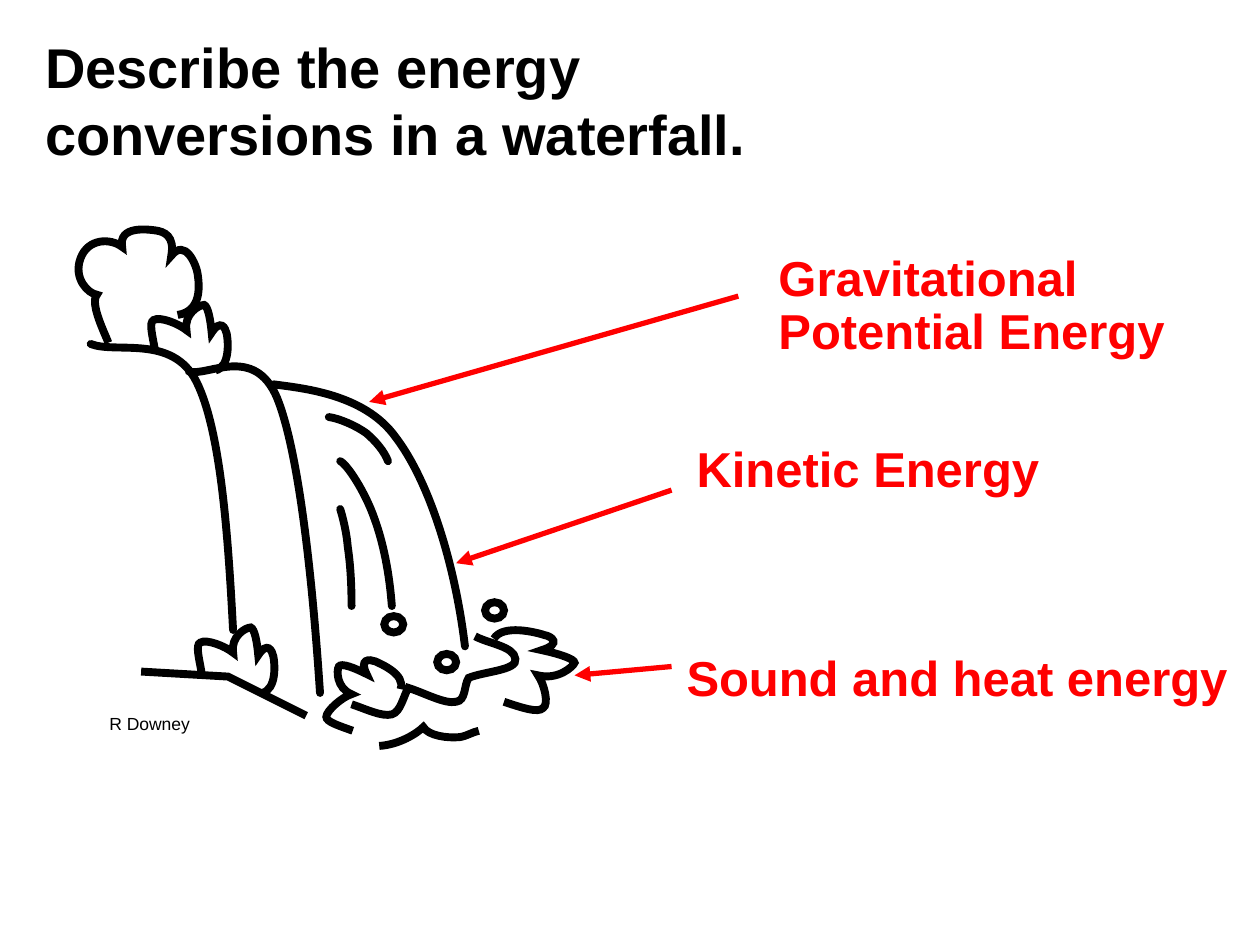
from pptx import Presentation
from pptx.dml.color import RGBColor
from pptx.enum.shapes import MSO_CONNECTOR as CONNECTOR, MSO_SHAPE as SHAPE
from pptx.enum.text import MSO_AUTO_SIZE as AUTO_SIZE
from pptx.oxml.ns import qn
from pptx.util import Inches, Pt
from lxml import etree

BLACK, RED = "000000", "FF0000"


def color(value):
    return RGBColor.from_string(value)


def add_text(shapes, box, text, size, ink, bold=True):
    label = shapes.add_textbox(*map(Inches, box))
    label.text_frame.word_wrap = True
    line = label.text_frame.paragraphs[0]
    line.text = text
    line.font.name, line.font.size, line.font.bold = "Arial", Pt(size), bold
    line.font.color.rgb = color(ink)
    return label


prs = Presentation()
prs.slide_width, prs.slide_height = Inches(10), Inches(7.5)
slide = prs.slides.add_slide(prs.slide_layouts[6])

# Question and energy labels
question = add_text(slide.shapes, (0.26, 0.21, 6.32, 1.18),
                    "Describe the energy conversions in a waterfall.", 32, BLACK)
question.text_frame.auto_size = AUTO_SIZE.SHAPE_TO_FIT_TEXT
potential = add_text(slide.shapes, (6.08, 1.97, 3.92, 1.18),
                     "Gravitational Potential Energy", 28, RED)
potential.text_frame.paragraphs[0].line_spacing = 0.9
add_text(slide.shapes, (5.43, 3.43, 2.95, 0.53), "Kinetic Energy", 28, RED)
add_text(slide.shapes, (5.35, 5.09, 4.65, 0.72), "Sound and heat energy", 28, RED)

# Arrows from the labels to the waterfall
for ends in [(5.86, 2.35, 2.93, 3.19), (5.33, 3.89, 3.62, 4.47), (5.33, 5.29, 4.56, 5.36)]:
    arrow = slide.shapes.add_connector(CONNECTOR.STRAIGHT, *map(Inches, ends))
    arrow.line.color.rgb = color(RED)
    arrow.line.width = Pt(3)
    properties = arrow._element.spPr
    etree.SubElement(properties.find(qn("a:ln")), qn("a:tailEnd"), type="triangle")
    etree.SubElement(properties, qn("a:effectLst"))

# Waterfall curves: a start point, then three Bezier points per curve
water = [
    [(2.17, 3.05), (2.38, 3.08), (2.89, 3.12), (3.14, 3.47),
     (3.4, 3.81), (3.61, 4.46), (3.69, 5.13)],
    [(1.5, 2.95), (1.65, 2.99), (2.02, 2.73), (2.2, 3.16),
     (2.37, 3.58), (2.48, 4.58), (2.54, 5.5)],
    [(0.72, 2.73), (0.92, 2.81), (1.37, 2.65), (1.56, 3.03),
     (1.75, 3.41), (1.81, 4.23), (1.85, 5)],
    [(2.7, 3.66), (2.76, 3.69), (2.9, 3.91), (2.97, 4.11),
     (3.04, 4.3), (3.09, 4.54), (3.11, 4.81)],
    [(2.7, 4.04), (2.71, 4.07), (2.75, 4.21), (2.76, 4.34),
     (2.78, 4.47), (2.79, 4.63), (2.79, 4.81)],
    [(2.61, 3.31), (2.69, 3.32), (2.83, 3.38), (2.91, 3.44),
     (2.98, 3.5), (3.05, 3.58), (3.08, 3.66)],
]
splashes = [
    [(2.79, 5.59), (2.91, 5.63), (3.03, 5.69), (3.11, 5.67),
     (3.18, 5.65), (3.2, 5.53), (3.24, 5.46), (3.37, 5.5), (3.53, 5.59), (3.62, 5.57),
     (3.7, 5.56), (3.68, 5.44), (3.72, 5.38), (3.84, 5.33), (4.11, 5.32), (4.09, 5.23),
     (4.08, 5.13), (3.88, 5.11), (3.77, 5.05)],
    [(4, 5.57), (4.15, 5.62), (4.27, 5.66), (4.31, 5.62),
     (4.36, 5.59), (4.32, 5.43), (4.27, 5.36), (4.43, 5.4), (4.55, 5.29), (4.56, 5.26),
     (4.56, 5.23), (4.44, 5.19), (4.3, 5.16), (4.46, 5.11), (4.38, 5.05), (4.32, 5.04),
     (4.26, 5.02), (3.99, 4.95), (3.92, 5.07)],
    [(2.8, 5.8), (2.69, 5.76), (2.59, 5.73), (2.59, 5.69),
     (2.59, 5.64), (2.72, 5.53), (2.79, 5.51), (2.67, 5.46), (2.67, 5.32), (2.69, 5.29),
     (2.71, 5.26), (2.81, 5.3), (2.91, 5.35), (2.85, 5.23), (2.93, 5.23), (2.98, 5.25),
     (3.02, 5.27), (3.22, 5.35), (3.18, 5.47)],
    [(3.01, 5.92), (3.17, 5.91), (3.31, 5.82), (3.36, 5.77),
     (3.4, 5.84), (3.55, 5.86), (3.65, 5.85), (3.71, 5.84), (3.75, 5.81), (3.8, 5.8)],
]
bush = [(1.23, 2.78), (1.21, 2.66), (1.18, 2.56), (1.22, 2.54),
        (1.27, 2.51), (1.42, 2.57), (1.48, 2.62), (1.46, 2.49), (1.58, 2.42), (1.62, 2.42),
        (1.65, 2.43), (1.67, 2.53), (1.68, 2.64), (1.75, 2.53), (1.79, 2.6), (1.8, 2.65),
        (1.81, 2.7), (1.83, 2.91), (1.71, 2.94)]
lower_bush = [(x + 0.37, y + 2.56) for x, y in bush]
tree = [(0.86, 2.72), (0.84, 2.66), (0.71, 2.41), (0.77, 2.34),
        (0.7, 2.33), (0.58, 2.21), (0.64, 2.05), (0.7, 1.89), (0.88, 1.89), (0.97, 1.96),
        (0.94, 1.79), (1.17, 1.82), (1.24, 1.83), (1.3, 1.84), (1.39, 1.87), (1.36, 2.03),
        (1.47, 1.89), (1.56, 2.1), (1.57, 2.18), (1.58, 2.25), (1.61, 2.47), (1.41, 2.5)]
bank = [(2.43, 5.68), (1.81, 5.37), (1.12, 5.33)]

waterfall = slide.shapes.add_group_shape().shapes
strokes = []
for points in water + splashes + [bush, lower_bush, bank, tree]:
    start, *rest = [(Inches(x), Inches(y)) for x, y in points]
    builder = waterfall.build_freeform(*start)
    builder.add_line_segments(rest, close=False)
    stroke = builder.convert_to_shape()
    strokes.append(stroke)
    if points is not bank:
        # Join every three segments into one cubic curve
        outline = next(stroke._element.iter(qn("a:path")))
        segments = outline.findall(qn("a:lnTo"))
        for first in range(0, len(segments), 3):
            curve = etree.SubElement(outline, qn("a:cubicBezTo"))
            for segment in segments[first:first + 3]:
                curve.append(segment[0])
                outline.remove(segment)

# Water drops
for left, top in [(3.05, 4.89), (3.85, 4.78), (3.47, 5.19)]:
    strokes.append(waterfall.add_shape(SHAPE.OVAL, Inches(left), Inches(top),
                                       Inches(0.15), Inches(0.13)))

# Common pen, with round ends on the flowing water
for number, stroke in enumerate(strokes):
    stroke.shadow.inherit = False
    stroke.fill.background()
    stroke.line.color.rgb = color(BLACK)
    stroke.line.width = Pt(4.5)
    pen = stroke._element.spPr.find(qn("a:ln"))
    etree.SubElement(pen, qn("a:miter"), lim="800000")
    if number < len(water):
        pen.set("cap", "rnd")

# Signature
signature = add_text(waterfall, (0.77, 5.61, 0.85, 0.27), "R Downey", 10, BLACK, bold=False)
signature.text_frame.word_wrap = False
signature.text_frame.auto_size = AUTO_SIZE.SHAPE_TO_FIT_TEXT

prs.save("out.pptx")
